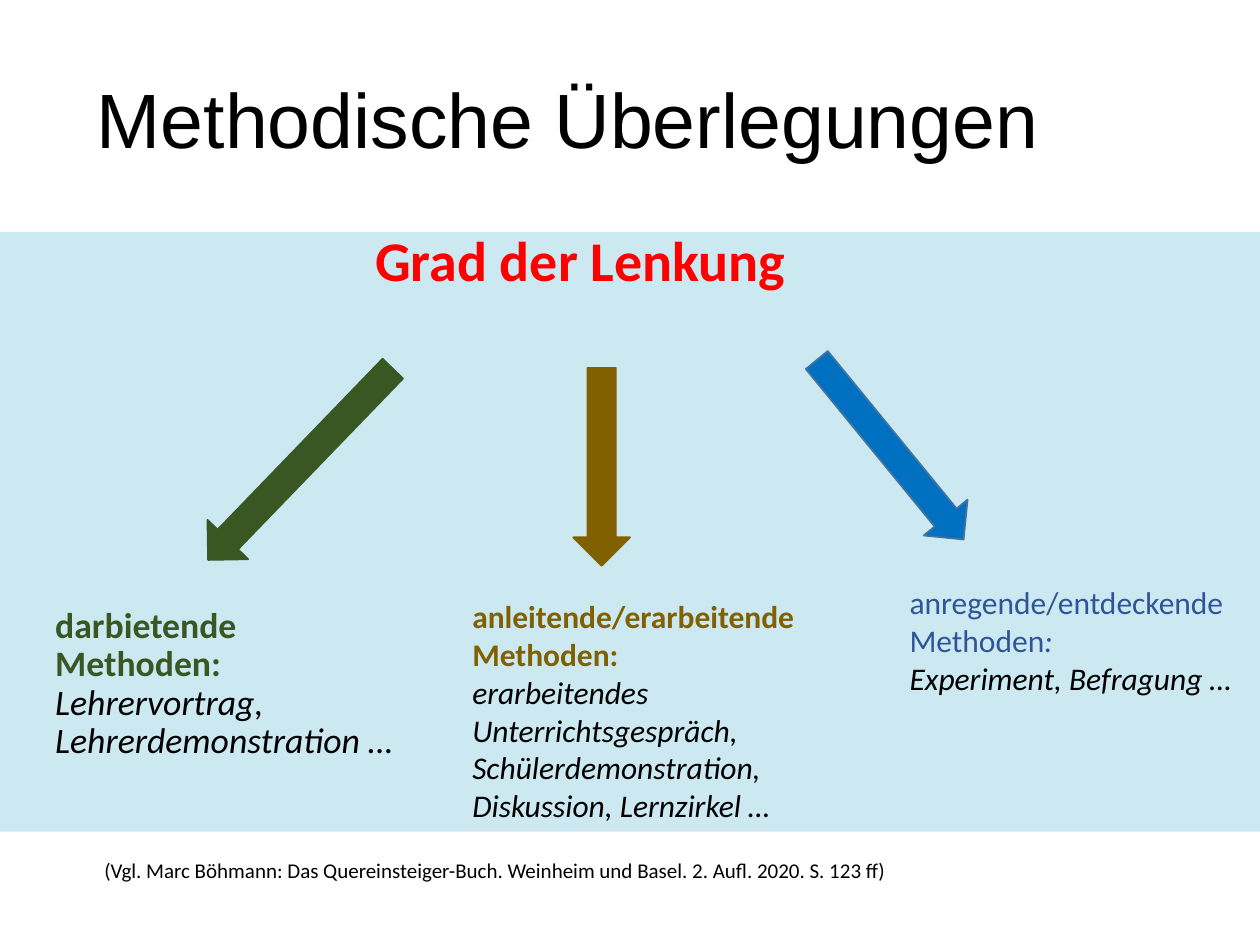
from dataclasses import dataclass

from pptx import Presentation
from pptx.dml.color import RGBColor
from pptx.enum.shapes import MSO_SHAPE as SHAPE
from pptx.enum.text import MSO_ANCHOR as ANCHOR, MSO_AUTO_SIZE as AUTO
from pptx.util import Inches, Pt


@dataclass(frozen=True)
class Theme:
    band: str = "CCE9F2"
    ink: str = "000000"
    accent: str = "FF0000"
    green: str = "385723"
    ochre: str = "806000"
    blue: str = "0070C0"
    blue_line: str = "43739E"
    blue_text: str = "2F5597"
    heading: str = "Arial"
    body: str = "Calibri"
    title: float = 44
    subtitle: float = 32
    large: float = 20.4
    normal: float = 18
    source: float = 12


class SlideBuilder:
    """Draws themed elements on one slide."""

    def __init__(self, slide, theme):
        self.s = slide
        self.t = theme

    def shape(self, kind, box, fill, line=None, rotation=0):
        sp = self.s.shapes.add_shape(kind, *map(Inches, box))
        sp.shadow.inherit = False
        sp.rotation = rotation
        sp.fill.solid()
        sp.fill.fore_color.rgb = RGBColor.from_string(fill)
        if line:
            sp.line.color.rgb = RGBColor.from_string(line)
            sp.line.width = Pt(1)
        else:
            sp.line.fill.background()
        return sp

    def text(self, box, lines, size, font=None, spacing=None, **frame):
        tf = self.s.shapes.add_textbox(*map(Inches, box)).text_frame
        for name, value in {"word_wrap": True, **frame}.items():
            setattr(tf, name, value)
        p = tf.paragraphs[0]
        if spacing:
            p.line_spacing = spacing
        for i, runs in enumerate(lines):
            if i:
                p.add_line_break()
            for text, color, style in runs:
                r = p.add_run()
                r.text = text
                r.font.color.rgb = RGBColor.from_string(color)
                fmt = {"name": font or self.t.body, "size": Pt(size), **style}
                for name, value in fmt.items():
                    setattr(r.font, name, value)


def main():
    prs = Presentation()
    prs.slide_width, prs.slide_height = Inches(10), Inches(7.5)
    t = Theme()
    b = SlideBuilder(prs.slides.add_slide(prs.slide_layouts[6]), t)
    bold, italic = {"bold": True}, {"italic": True}
    grow = {"auto_size": AUTO.SHAPE_TO_FIT_TEXT}

    b.shape(SHAPE.RECTANGLE, (0, 1.84, 10, 4.76), t.band)
    b.text((0.67, 0.25, 8.66, 1.46), [[("Methodische Überlegungen", t.ink, {})]],
           t.title, t.heading, 0.9, vertical_anchor=ANCHOR.MIDDLE)
    b.text((2.88, 1.74, 5.59, 0.64), [[("Grad der Lenkung", t.accent, bold)]],
           t.subtitle, **grow)

    for box, fill, line, rotation in (
        ((2.16, 2.63, 0.45, 2.11), t.green, t.green, 44),
        ((4.55, 2.92, 0.45, 1.57), t.ochre, t.ochre, 0),
        ((6.84, 2.65, 0.45, 1.84), t.blue, t.blue_line, 320.7),
    ):
        b.shape(SHAPE.DOWN_ARROW, box, fill, line, rotation)

    b.text((0.34, 4.77, 2.93, 1.42),
           [[("darbietende Methoden: ", t.green, bold),
             ("Lehrervortrag, Lehrerdemonstration …", t.ink, italic)]],
           t.large, spacing=0.9)
    b.text((3.65, 4.69, 2.93, 2.22),
           [[("anleitende/erarbeitende Methoden: ", t.ochre, bold)],
            [("erarbeitendes Unterrichtsgespräch, Schülerdemonstration, "
              "Diskussion, Lernzirkel …", t.ink, italic)]],
           t.normal, **grow)
    b.text((7.12, 4.58, 2.91, 1.31),
           [[("anregende/entdeckende Methoden", t.blue_text, {}),
             (": ", t.blue_text, italic)],
            [("Experiment, Befragung …", t.ink, italic)]],
           t.normal, **grow)
    b.text((0.73, 6.76, 6.44, 0.5),
           [[("(Vgl. Marc Böhmann: Das Quereinsteiger-Buch. Weinheim und Basel. "
              "2. Aufl. 2020. S. 123 ff)", t.ink, {})]],
           t.source, word_wrap=False, **grow)
    prs.save("out.pptx")


if __name__ == "__main__":
    main()
